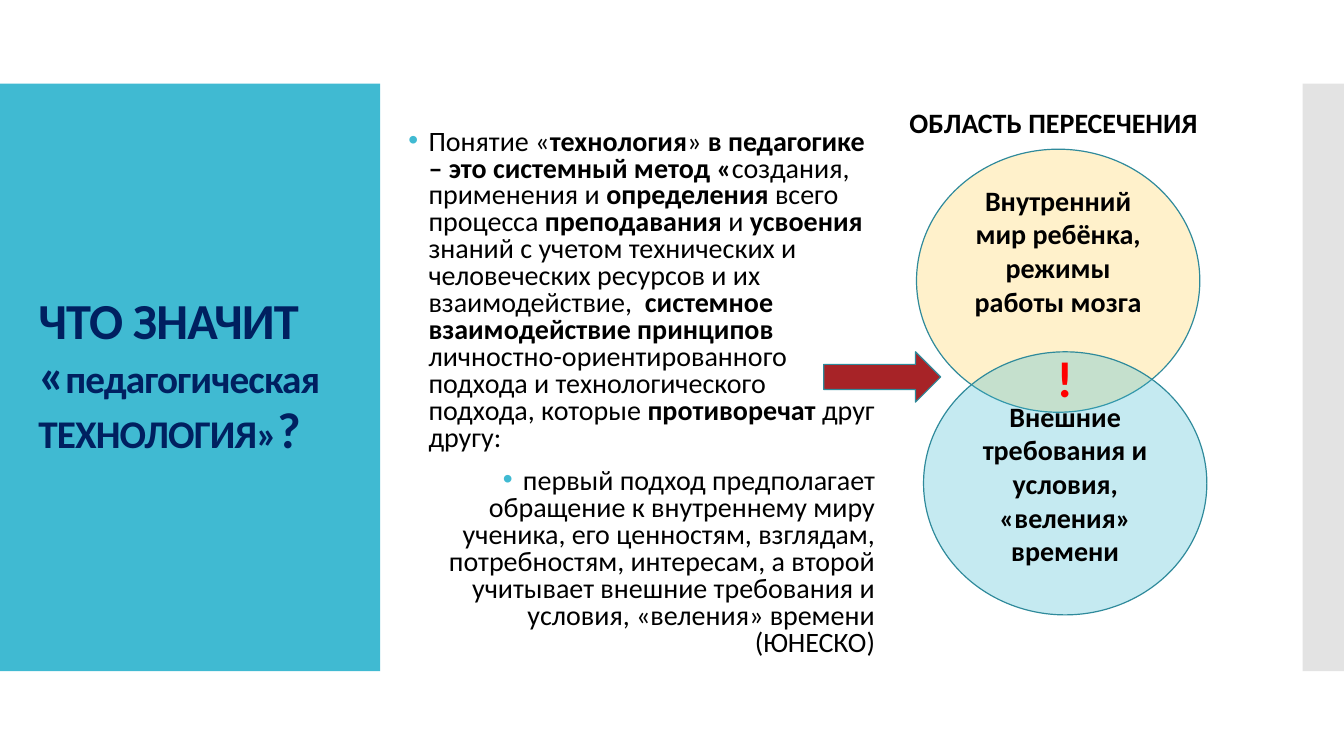
from dataclasses import dataclass
from typing import Optional

import lxml.etree
import pptx
import pptx.dml.color
import pptx.enum.shapes
import pptx.enum.text
import pptx.oxml.ns
import pptx.util

Inches = pptx.util.Inches
Pt = pptx.util.Pt
ShapeKind = pptx.enum.shapes.MSO_SHAPE
Align = pptx.enum.text.PP_ALIGN
Anchor = pptx.enum.text.MSO_ANCHOR
qn = pptx.oxml.ns.qn


@dataclass(frozen=True)
class Theme:
    font: str = "Calibri"
    accent: str = "40BAD2"
    outline: str = "2F8A9B"
    panel_gray: str = "C8C8C8"
    cream: str = "FFF1CB"
    arrow: str = "A72327"
    navy: str = "002060"
    black: str = "000000"
    red: str = "FF0000"
    large: int = 36
    medium: int = 28
    body: int = 20
    outline_width: float = 0.85


@dataclass(frozen=True)
class Box:
    left: float
    top: float
    width: float
    height: float


@dataclass(frozen=True)
class Figure:
    kind: ShapeKind
    box: Box
    fill: str
    opacity: int = 100
    outlined: bool = True
    lines: tuple[str, ...] = ()
    margins: tuple[float, float] = (0.05, 0.05)


THEME = Theme()

PANELS = [
    Figure(ShapeKind.RECTANGLE, Box(0, 0.83, 3.77, 5.83), THEME.accent, outlined=False),
    Figure(ShapeKind.RECTANGLE, Box(12.92, 0.83, 0.42, 5.83), THEME.panel_gray, 50, False),
]
FIGURES = [
    Figure(ShapeKind.OVAL, Box(9.09, 1.48, 2.81, 2.61), THEME.cream,
           lines=("Внутренний мир ребёнка,", "режимы работы мозга"), margins=(0, 0.6)),
    Figure(ShapeKind.OVAL, Box(9.16, 3.49, 2.81, 2.61), THEME.accent, 30,
           lines=("Внешние требования и условия, «веления» времени",)),
    Figure(ShapeKind.RIGHT_ARROW, Box(8.17, 3.49, 1.16, 0.5), THEME.arrow),
]
TITLE_RUNS = [
    ("ЧТО ЗНАЧИТ «", THEME.large),
    ("педагогическая", THEME.medium),
    (" ", THEME.large),
    ("ТЕХНОЛОГИЯ»", THEME.medium),
    ("?", THEME.large),
]
# Double asterisks switch bold on and off
DEFINITION = (
    "Понятие «**технология**» **в педагогике – это системный метод «**создания, применения и "
    "**определения** всего процесса **преподавания** и **усвоения** знаний с учетом технических "
    "и человеческих ресурсов и их взаимодействие, ** системное взаимодействие принципов "
    "**личностно-ориентированного подхода и технологического подхода, которые "
    "**противоречат** друг другу:"
)
APPROACHES = (
    "первый подход предполагает обращение к внутреннему миру ученика, его ценностям, взглядам, "
    "потребностям, интересам, а второй учитывает внешние требования и условия, «веления» "
    "времени (ЮНЕСКО)"
)


def color(value: str) -> pptx.dml.color.RGBColor:
    return pptx.dml.color.RGBColor.from_string(value)


def place(shape, box: Box) -> None:
    shape.left, shape.top = Inches(box.left), Inches(box.top)
    shape.width, shape.height = Inches(box.width), Inches(box.height)


def style_run(run, size: int, ink: str = THEME.black, bold: bool = True) -> None:
    run.font.name = THEME.font
    run.font.size = Pt(size)
    run.font.bold = bold
    run.font.color.rgb = color(ink)


def prepare_frame(shape, anchor: Anchor):
    text_frame = shape.text_frame
    text_frame.word_wrap = True
    text_frame.auto_size = pptx.enum.text.MSO_AUTO_SIZE.NONE
    text_frame.vertical_anchor = anchor
    return text_frame


def set_bullet(paragraph, symbol: Optional[str]) -> None:
    properties = paragraph._p.get_or_add_pPr()
    indent = Inches(0.2) if symbol else 0
    properties.set("marL", str(indent))
    properties.set("indent", str(-indent))
    if symbol is None:
        lxml.etree.SubElement(properties, qn("a:buNone"))
        return
    bullet_color = lxml.etree.SubElement(properties, qn("a:buClr"))
    lxml.etree.SubElement(bullet_color, qn("a:srgbClr"), val=THEME.accent)
    lxml.etree.SubElement(properties, qn("a:buFont"), typeface="Arial")
    lxml.etree.SubElement(properties, qn("a:buChar"), char=symbol)


def format_paragraph(paragraph, align: Align, spacing: float, before: int = 0) -> None:
    paragraph.alignment = align
    paragraph.line_spacing = spacing
    paragraph.space_before = Pt(before)


def add_figure(slide, figure: Figure):
    box = figure.box
    shape = slide.shapes.add_shape(figure.kind, Inches(box.left), Inches(box.top),
                                   Inches(box.width), Inches(box.height))
    shape.shadow.inherit = False
    shape.fill.solid()
    shape.fill.fore_color.rgb = color(figure.fill)
    if figure.opacity < 100:
        fill_color = shape._element.spPr.find(qn("a:solidFill")).find(qn("a:srgbClr"))
        lxml.etree.SubElement(fill_color, qn("a:alpha"), val=str(figure.opacity * 1000))
    if figure.outlined:
        shape.line.color.rgb = color(THEME.outline)
        shape.line.width = Pt(THEME.outline_width)
    else:
        shape.line.fill.background()
    if figure.lines:
        text_frame = prepare_frame(shape, Anchor.MIDDLE)
        text_frame.margin_top, text_frame.margin_bottom = map(Inches, figure.margins)
        text_frame.text = "\n".join(figure.lines)
        for paragraph in text_frame.paragraphs:
            paragraph.alignment = Align.CENTER
            style_run(paragraph.runs[0], THEME.body)
    return shape


def fill_title(title) -> None:
    place(title, Box(0.28, 1.23, 3.29, 5.03))
    paragraph = prepare_frame(title, Anchor.MIDDLE).paragraphs[0]
    format_paragraph(paragraph, Align.LEFT, 0.9)
    for text, size in TITLE_RUNS:
        run = paragraph.add_run()
        run.text = text
        style_run(run, size, THEME.navy)
        run._r.get_or_add_rPr().set("spc", "-60")


def fill_body(body) -> None:
    place(body, Box(3.95, 0.95, 4.83, 5.91))
    text_frame = prepare_frame(body, Anchor.MIDDLE)
    items = [(text_frame.paragraphs[0], DEFINITION, Align.LEFT, 0),
             (text_frame.add_paragraph(), APPROACHES, Align.RIGHT, 12)]
    for paragraph, text, align, before in items:
        format_paragraph(paragraph, align, 0.8, before)
        set_bullet(paragraph, "•")
        for index, part in enumerate(text.split("**")):
            run = paragraph.add_run()
            run.text = part
            style_run(run, THEME.body, bold=index % 2 == 1)


def fill_heading(heading) -> None:
    place(heading, Box(8.55, 0.95, 3.8, 5.6))
    text_frame = prepare_frame(heading, Anchor.TOP)
    text_frame.margin_top = Inches(0.16)
    text_frame.text = "ОБЛАСТЬ ПЕРЕСЕЧЕНИЯ"
    paragraph = text_frame.paragraphs[0]
    format_paragraph(paragraph, Align.CENTER, 0.8)
    set_bullet(paragraph, None)
    style_run(paragraph.runs[0], THEME.body)


def add_exclamation(slide) -> None:
    text_box = slide.shapes.add_textbox(Inches(10.25), Inches(3.39), Inches(0.62), Inches(0.71))
    text_frame = prepare_frame(text_box, Anchor.TOP)
    text_frame.text = "!"
    text_frame.paragraphs[0].alignment = Align.CENTER
    style_run(text_frame.paragraphs[0].runs[0], THEME.large, THEME.red)


def main() -> None:
    presentation = pptx.Presentation()
    presentation.slide_width, presentation.slide_height = Inches(13.33), Inches(7.5)
    slide = presentation.slides.add_slide(presentation.slide_layouts[3])

    # Side panels go behind the placeholders
    for position, panel in enumerate(PANELS, start=2):
        slide.shapes._spTree.insert(position, add_figure(slide, panel)._element)

    # Title, definition and diagram heading
    fill_title(slide.shapes.title)
    fill_body(slide.placeholders[1])
    fill_heading(slide.placeholders[2])

    # Overlapping circles with the arrow to their intersection
    for figure in FIGURES:
        add_figure(slide, figure)
    add_exclamation(slide)
    presentation.save("out.pptx")


if __name__ == "__main__":
    main()
